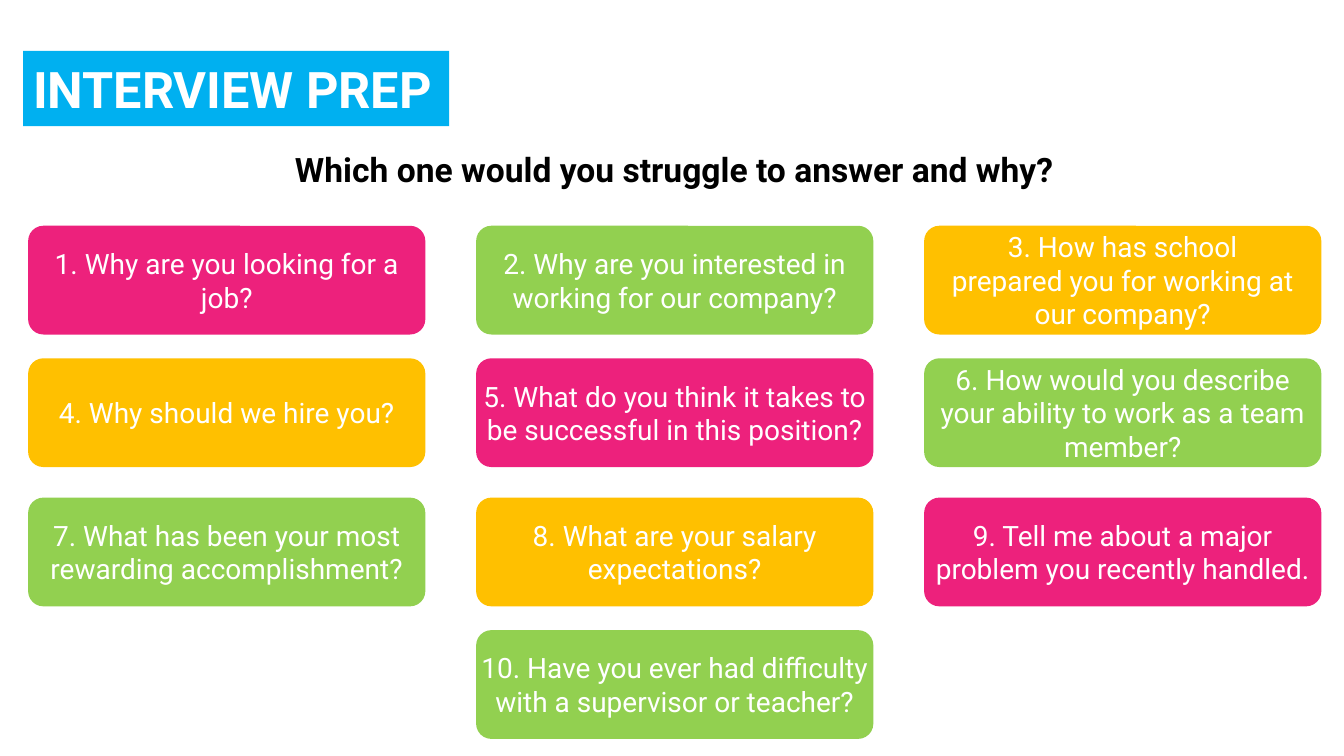
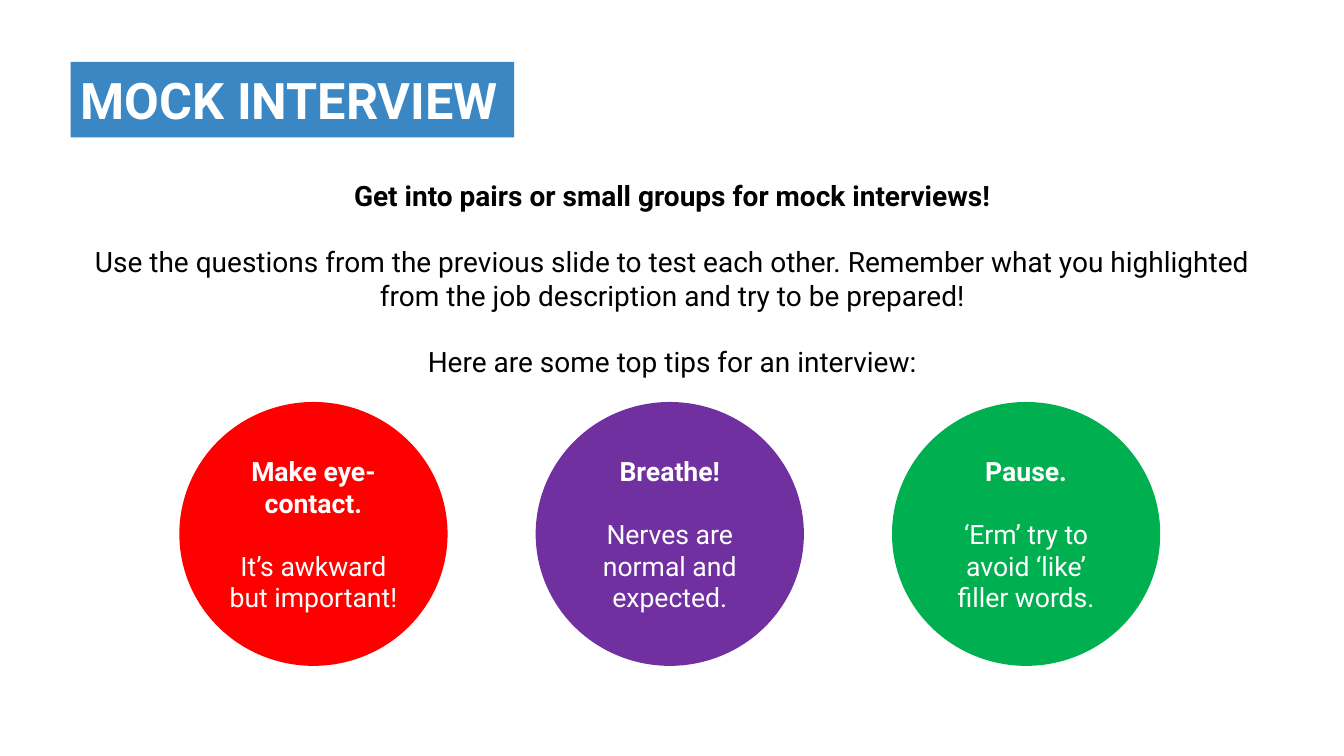
from dataclasses import dataclass

from lxml import etree
from pptx import Presentation
from pptx.dml.color import RGBColor
from pptx.enum.shapes import MSO_SHAPE
from pptx.enum.text import MSO_ANCHOR, MSO_AUTO_SIZE, PP_ALIGN
from pptx.oxml.ns import qn
from pptx.util import Cm, Pt

LEFT, CENTER = PP_ALIGN.LEFT, PP_ALIGN.CENTER
TOP, MIDDLE = MSO_ANCHOR.TOP, MSO_ANCHOR.MIDDLE
NO_AUTOFIT = MSO_AUTO_SIZE.NONE
ROUNDED, OVAL = MSO_SHAPE.ROUNDED_RECTANGLE, MSO_SHAPE.OVAL

FONT = "Roboto"
LINE_HEIGHT = 1.17
WHITE = RGBColor(0xFF, 0xFF, 0xFF)
BLACK = RGBColor(0x00, 0x00, 0x00)
SKY = RGBColor(0x00, 0xB0, 0xF0)
BLUE = RGBColor(0x3A, 0x87, 0xC4)
PINK = RGBColor(0xED, 0x21, 0x7C)
LIME = RGBColor(0x92, 0xD0, 0x50)
AMBER = RGBColor(0xFF, 0xC0, 0x00)
RED = RGBColor(0xFF, 0x00, 0x00)
PURPLE = RGBColor(0x70, 0x30, 0xA0)
GREEN = RGBColor(0x00, 0xB0, 0x50)


@dataclass(frozen=True)
class Box:
    left: float
    top: float
    width: float
    height: float

    def lengths(self) -> tuple[Cm, Cm, Cm, Cm]:
        return Cm(self.left), Cm(self.top), Cm(self.width), Cm(self.height)


@dataclass(frozen=True)
class Question:
    text: str
    side_margin: float = 0


@dataclass(frozen=True)
class Tip:
    heading: str
    detail: str
    color: RGBColor


QUESTIONS = [
    Question("1. Why are you looking for a job?"),
    Question("2. Why are you interested in working for our company?"),
    Question("3. How has school prepared you for working at our company?", 0.55),
    Question("4. Why should we hire you?"),
    Question("5. What do you think it takes to be successful in this position?"),
    Question("6. How would you describe your ability to work as a team member?"),
    Question("7. What has been your most rewarding accomplishment?"),
    Question("8. What are your salary expectations?"),
    Question("9. Tell me about a major problem you recently handled."),
    Question("10. Have you ever had difficulty with a supervisor or teacher?"),
]
CARD_COLORS = [PINK, LIME, AMBER]
COLUMNS = 3
CARD_LEFT, CARD_PITCH = 0.71, 11.29
CARD_WIDTH, CARD_HEIGHT = 10.01, 2.74
ROW_TOPS = [5.69, 9.03, 12.54, 15.88]

TIPS = [
    Tip("Make eye-contact.", "It’s awkward but important!", RED),
    Tip("Breathe!", "Nerves are normal and expected.", PURPLE),
    Tip("Pause.", "‘Erm’ try to avoid ‘like’ filler words.", GREEN),
]
TIP_LEFT, TIP_PITCH, TIP_TOP = 4.52, 8.98, 10.13
TIP_WIDTH, TIP_HEIGHT = 6.76, 6.65


def place(sp, box: Box) -> None:
    sp.left, sp.top, sp.width, sp.height = box.lengths()


def write(tf, lines: list[str], size: float, color: RGBColor, align=CENTER,
          anchor=MIDDLE, bold_first: bool = True) -> None:
    tf.word_wrap = True
    tf.auto_size = NO_AUTOFIT
    tf.vertical_anchor = anchor
    tf.text = "\n".join(lines)
    for i, p in enumerate(tf.paragraphs):
        p.alignment = align
        p.space_before = Pt(round(size * LINE_HEIGHT, 1) if i else 0)
        for r in p.runs:
            r.font.name = FONT
            r.font.size = Pt(size)
            r.font.bold = bold_first and i == 0
            r.font.color.rgb = color


def add_shape(slide, kind, box: Box, color: RGBColor):
    sp = slide.shapes.add_shape(kind, *box.lengths())
    sp.shadow.inherit = False
    sp.fill.solid()
    sp.fill.fore_color.rgb = color
    sp.line.fill.background()
    return sp


def add_slide(prs, title: str, band: Box, band_color: RGBColor,
              body: list[str], body_box: Box, body_size: float):
    slide = prs.slides.add_slide(prs.slide_layouts[1])
    sp = slide.shapes.title
    place(sp, band)
    sp.fill.solid()
    sp.fill.fore_color.rgb = band_color
    write(sp.text_frame, [title], 36, WHITE, LEFT)

    sp = slide.placeholders[1]
    place(sp, body_box)
    write(sp.text_frame, body, body_size, BLACK, anchor=TOP)
    for p in sp.text_frame.paragraphs:
        pPr = p._p.get_or_add_pPr()
        pPr.set("marL", "0")
        pPr.set("indent", "0")
        etree.SubElement(pPr, qn("a:buNone"))
    return slide


def add_questions(slide) -> None:
    for i, question in enumerate(QUESTIONS):
        row, col = divmod(i, COLUMNS)
        if row == len(ROW_TOPS) - 1:
            col = COLUMNS // 2
        box = Box(CARD_LEFT + col * CARD_PITCH, ROW_TOPS[row], CARD_WIDTH, CARD_HEIGHT)
        sp = add_shape(slide, ROUNDED, box, CARD_COLORS[(col - row) % COLUMNS])
        sp.adjustments[0] = 0.14
        tf = sp.text_frame
        tf.margin_left = tf.margin_right = Cm(question.side_margin)
        tf.margin_top = tf.margin_bottom = 0
        write(tf, [question.text], 20, WHITE, bold_first=False)


def add_tips(slide) -> None:
    for i, tip in enumerate(TIPS):
        box = Box(TIP_LEFT + i * TIP_PITCH, TIP_TOP, TIP_WIDTH, TIP_HEIGHT)
        sp = add_shape(slide, OVAL, box, tip.color)
        write(sp.text_frame, [tip.heading, tip.detail], 19, WHITE)


def main() -> None:
    prs = Presentation()
    prs.slide_width, prs.slide_height = Cm(33.87), Cm(19.05)

    slide = add_slide(
        prs, "INTERVIEW PREP", Box(0.58, 1.28, 10.74, 1.9), SKY,
        ["Which one would you struggle to answer and why?"],
        Box(6.6, 3.63, 20.78, 1.28), 24)
    add_questions(slide)

    slide = add_slide(
        prs, "MOCK INTERVIEW", Box(1.78, 1.56, 11.18, 1.9), BLUE,
        ["Get into pairs or small groups for mock interviews!",
         "Use the questions from the previous slide to test each other. "
         "Remember what you highlighted from the job description and try to be prepared!",
         "Here are some top tips for an interview:"],
        Box(1.78, 4.37, 30.33, 5.38), 20)
    add_tips(slide)

    prs.save("out.pptx")


if __name__ == "__main__":
    main()
